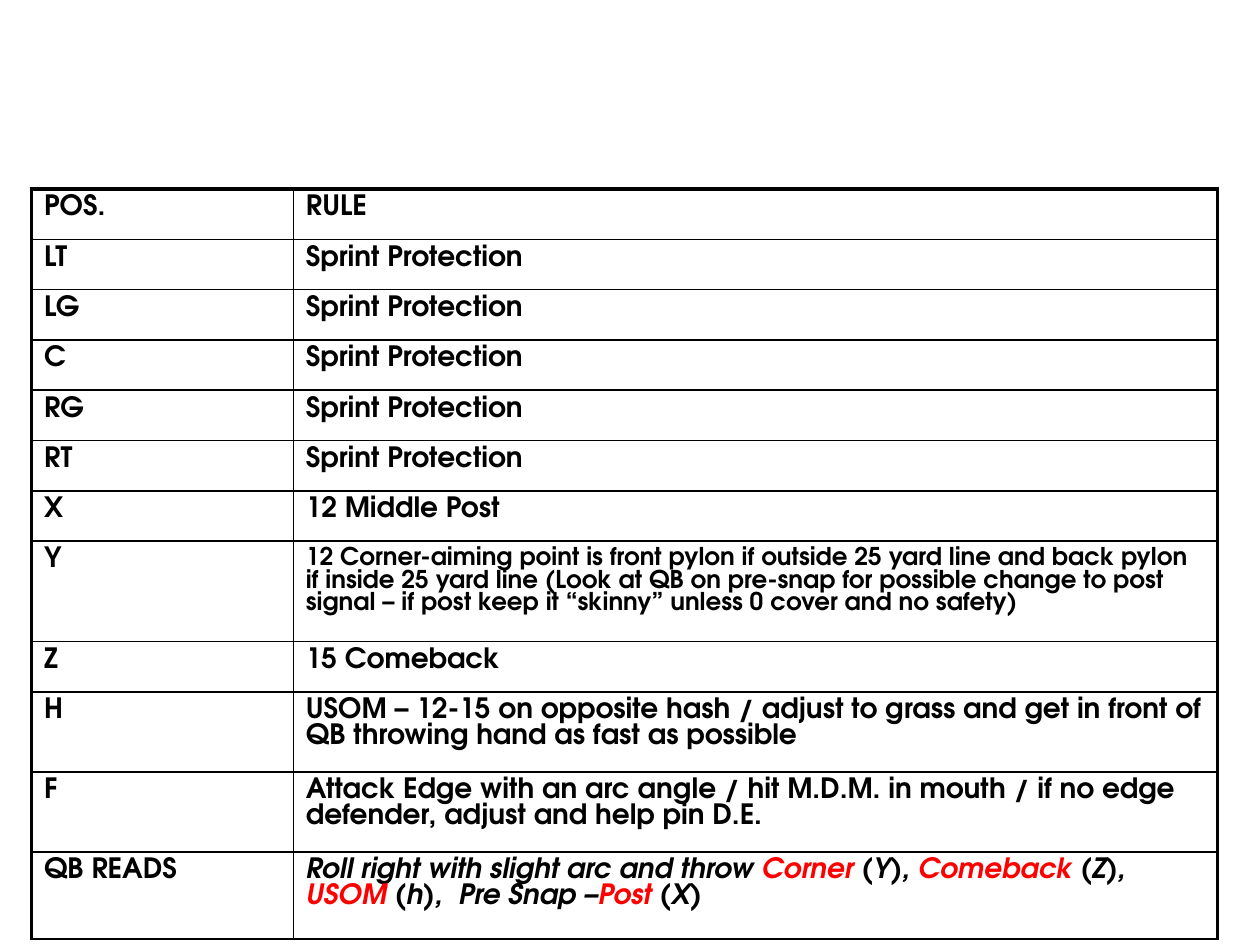
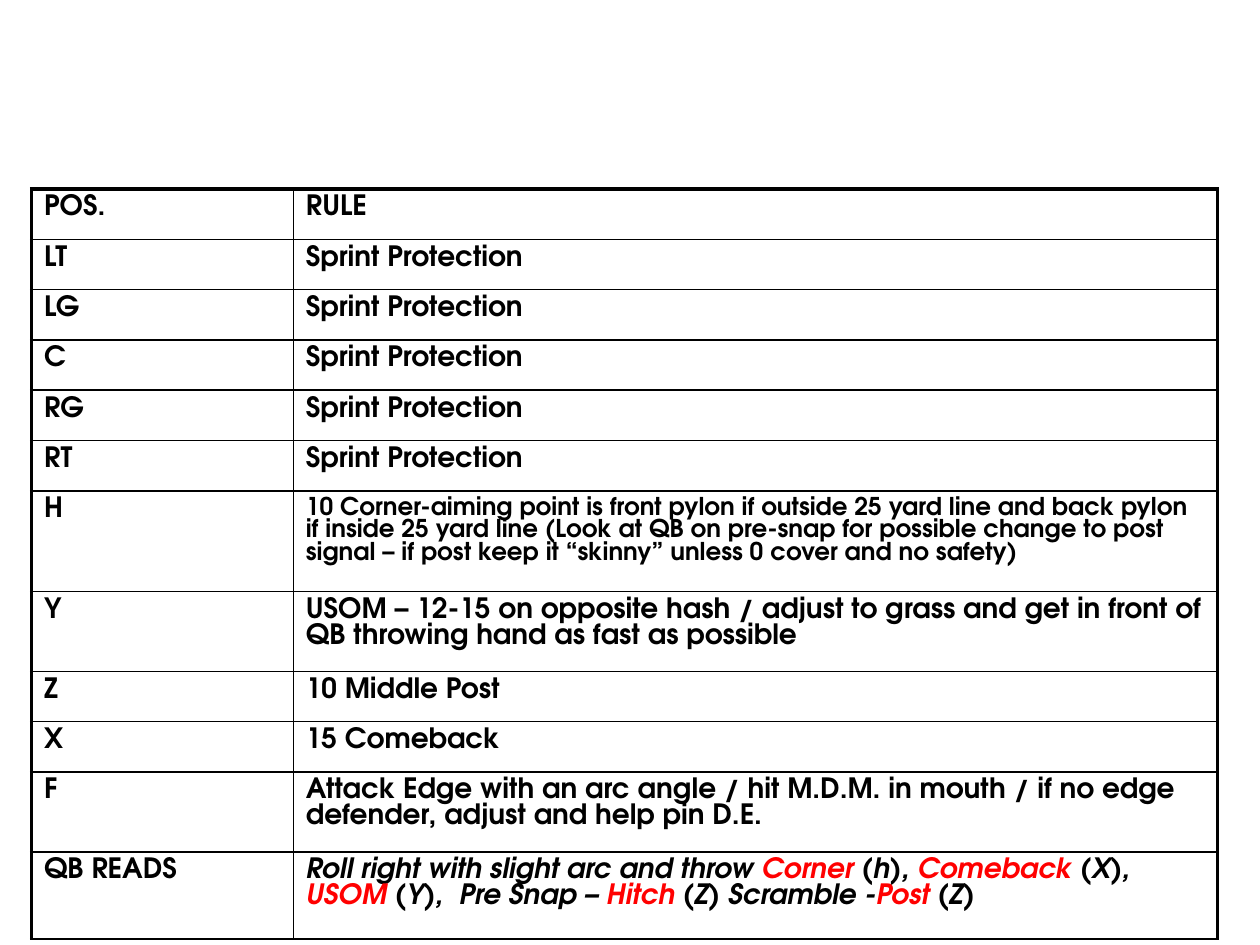
from dataclasses import dataclass

from lxml import etree
from pptx import Presentation
from pptx import table as tb
from pptx.dml.color import RGBColor
from pptx.enum import text as tx
from pptx.oxml import ns
from pptx.slide import Slide
from pptx.util import Pt


@dataclass(frozen=True)
class Theme:
    face: str = "TeX Gyre Adventor"
    ink: RGBColor = RGBColor(0, 0, 0)
    hot: RGBColor = RGBColor(255, 0, 0)
    paper: RGBColor = RGBColor(255, 255, 255)
    size: int = 16
    small: int = 14
    thin: int = 1
    thick: int = 2


THEME = Theme()
LEFT, TOP = 18, 108
COLS = (149.6, 528.4)
SHORT, MID, TALL, LAST = 28.75, 45.7, 57.5, 49.8


@dataclass(frozen=True)
class Rule:
    pos: str
    text: str
    high: float = SHORT
    size: int = THEME.size
    slant: bool = False


def corner(pos: str, yards: int) -> Rule:
    text = (
        f"{yards} Corner-aiming point is front pylon if outside 25 yard line "
        "and back pylon if inside 25 yard line (Look at QB on pre-snap for "
        "possible change to post signal – if post keep it “skinny” unless "
        "0 cover and no safety)"
    )
    return Rule(pos, text, TALL, THEME.small)


def cross(pos: str) -> Rule:
    text = (
        "USOM – 12-15 on opposite hash / adjust to grass and get in front "
        "of QB throwing hand as fast as possible"
    )
    return Rule(pos, text, MID)


def play(routes: list[Rule], reads: str) -> list[Rule]:
    line = [Rule(pos, "Sprint Protection") for pos in ("LT", "LG", "C", "RG", "RT")]
    edge = (
        "Attack Edge with an arc angle / hit M.D.M. in mouth / if no edge "
        "defender, adjust and help pin D.E."
    )
    roll = "Roll right with slight arc and throw " + reads
    return [
        Rule("POS.", "RULE"),
        *line,
        *routes,
        Rule("F", edge, MID),
        Rule("QB READS", roll, LAST, slant=True),
    ]


PLAYS = (
    play(
        [Rule("X", "12 Middle Post"), corner("Y", 12), Rule("Z", "15 Comeback"), cross("H")],
        "|Corner |(Y), |Comeback |(Z), |USOM |(h),  Pre Snap –|Post |(X)",
    ),
    play(
        [corner("H", 10), cross("Y"), Rule("Z", "10 Middle Post"), Rule("X", "15 Comeback")],
        "|Corner |(h), |Comeback |(X), |USOM |(Y),  Pre Snap – |Hitch |(Z) Scramble -|Post |(Z)",
    ),
)


def write(cell: tb._Cell, text: str, size: int, slant: bool) -> None:
    cell.fill.solid()
    cell.fill.fore_color.rgb = THEME.paper
    cell.vertical_anchor = tx.MSO_ANCHOR.TOP
    para = cell.text_frame.paragraphs[0]
    font = para.font
    font.name, font.size = THEME.face, Pt(size)
    font.bold, font.italic = True, slant
    font.color.rgb = THEME.ink
    for spot, part in enumerate(text.split("|")):
        run = para.add_run()
        run.text = part
        if spot % 2:
            run.font.color.rgb = THEME.hot


def border(cell: tb._Cell, top: bool, first: bool) -> None:
    props = cell._tc.get_or_add_tcPr()
    sides = {"lnL": first, "lnR": not first, "lnT": top, "lnB": False}
    for spot, (side, bold) in enumerate(sides.items()):
        width = Pt(THEME.thick if bold else THEME.thin)
        line = etree.Element(ns.qn(f"a:{side}"), w=str(width))
        fill = etree.SubElement(line, ns.qn("a:solidFill"))
        etree.SubElement(fill, ns.qn("a:srgbClr"), val=str(THEME.ink))
        props.insert(spot, line)


def draw(slide: Slide, rules: list[Rule]) -> None:
    high = sum(rule.high for rule in rules)
    frame = slide.shapes.add_table(
        len(rules), len(COLS), Pt(LEFT), Pt(TOP), Pt(sum(COLS)), Pt(high)
    )
    grid = frame.table
    grid.first_row = grid.horz_banding = False
    for col, width in zip(grid.columns, COLS):
        col.width = Pt(width)
    for row, rule in enumerate(rules):
        grid.rows[row].height = Pt(rule.high)
        pos, text = grid.cell(row, 0), grid.cell(row, 1)
        write(pos, rule.pos, THEME.size, False)
        write(text, rule.text, rule.size, rule.slant)
        border(pos, row == 0, True)
        border(text, row == 0, False)


def main() -> None:
    deck = Presentation()
    deck.slide_width, deck.slide_height = Pt(720), Pt(540)
    for rules in PLAYS:
        draw(deck.slides.add_slide(deck.slide_layouts[6]), rules)
    deck.save("out.pptx")


if __name__ == "__main__":
    main()
